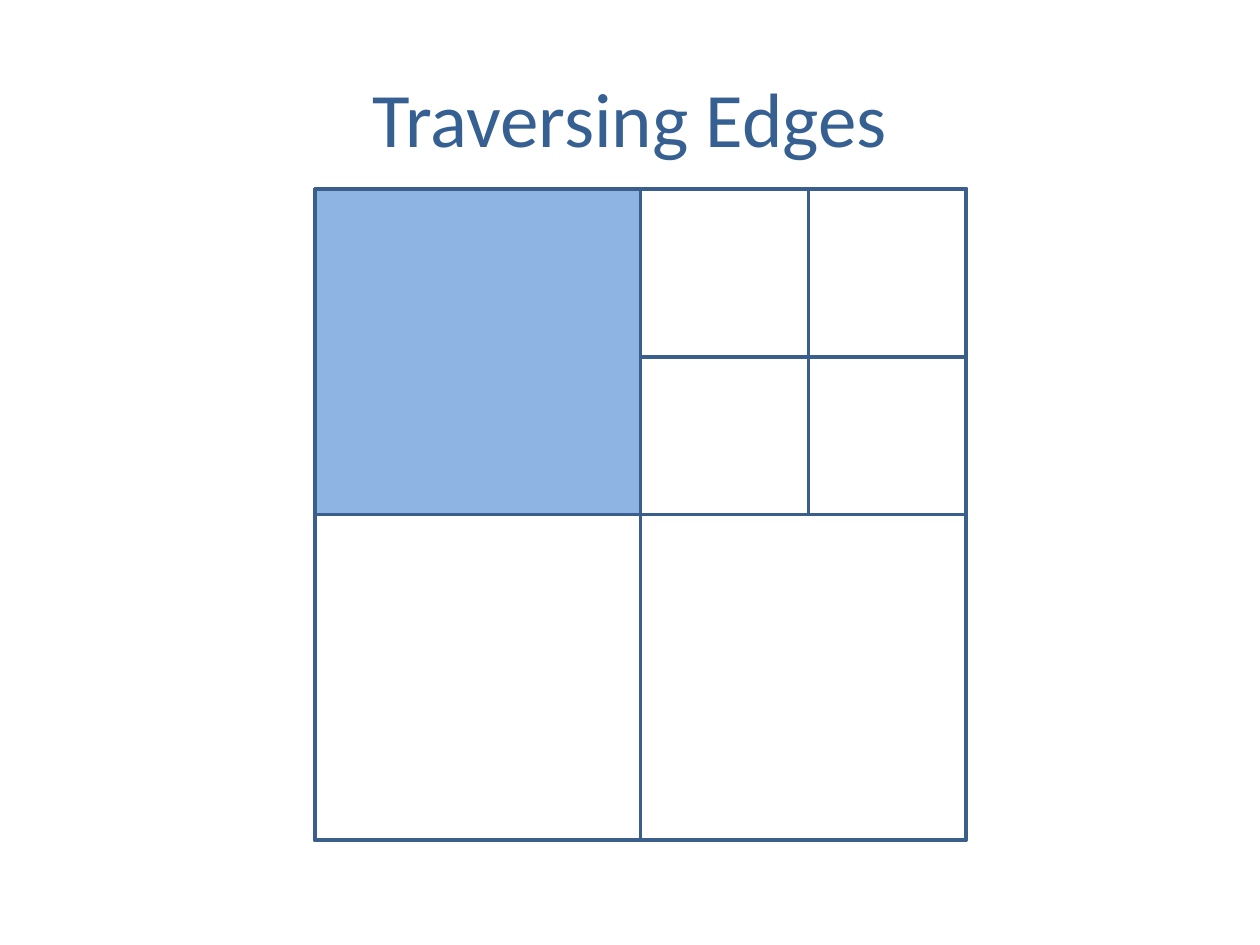
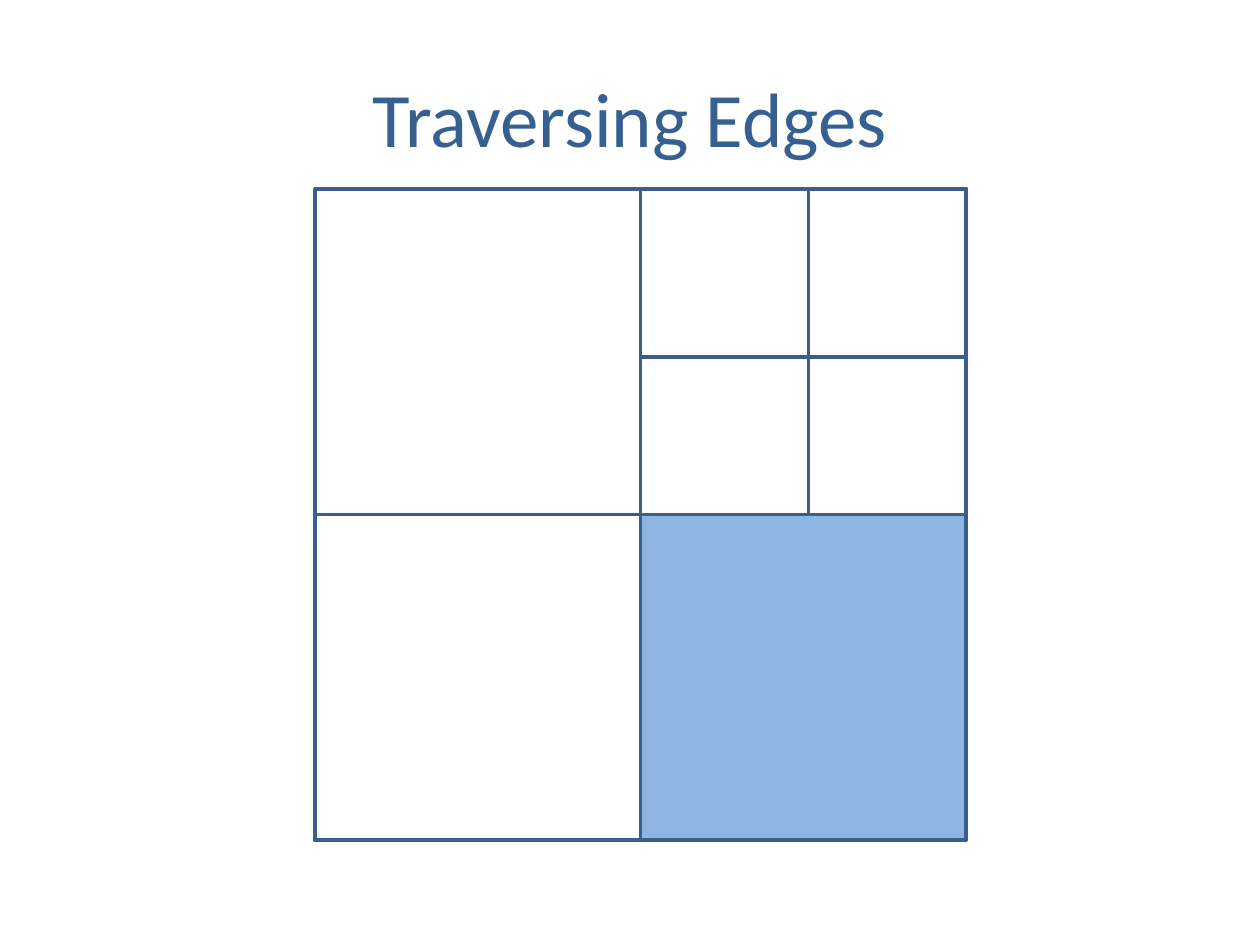
from pptx import Presentation
from pptx.dml.color import RGBColor
from pptx.enum.shapes import MSO_SHAPE
from pptx.enum.text import MSO_ANCHOR, PP_ALIGN
from pptx.util import Emu, Pt

RECT = MSO_SHAPE.RECTANGLE
MIDDLE = MSO_ANCHOR.MIDDLE
CENTER = PP_ALIGN.CENTER

# 120 px to the inch
SCALE = 7620
INK, EDGE, MARK = "376092", "3A5F8C", "8EB4E3"

# Quadtree: root square, four quadrants, one quadrant split again
LEFT, TOP, HALF = 300, 180, 310
SPLIT = (160, 150)


def px(*sizes):
    return [Emu(size * SCALE) for size in sizes]


def color(code):
    return RGBColor.from_string(code)


def put(target, values):
    for name, value in values.items():
        setattr(target, name, value)


class Deck:
    font = {"name": "Calibri", "size": Pt(44), "bold": False}
    frame = {"vertical_anchor": MIDDLE, "word_wrap": True}
    line = {"width": Pt(2)}

    def __init__(self):
        self.file = Presentation()
        width, height = px(1200, 900)
        put(self.file, {"slide_width": width, "slide_height": height})
        self.slide = None

    def page(self, text):
        """Start a slide and set its title."""
        self.slide = self.file.slides.add_slide(self.file.slide_layouts[5])
        title = self.slide.shapes.title
        spots = ("left", "top", "width", "height")
        put(title, dict(zip(spots, px(60, 36, 1080, 150))))
        put(title.text_frame, self.frame)
        title.text_frame.text = text
        para = title.text_frame.paragraphs[0]
        para.alignment = CENTER
        put(para.font, self.font)
        para.font.color.rgb = color(INK)

    def cell(self, left, top, width, height, fill=None):
        """Draw an outlined box, filled only if marked."""
        box = self.slide.shapes.add_shape(RECT, *px(left, top, width, height))
        box.shadow.inherit = False
        if fill:
            box.fill.solid()
            box.fill.fore_color.rgb = color(fill)
        else:
            box.fill.background()
        put(box.line, self.line)
        box.line.color.rgb = color(EDGE)

    def tree(self, marked):
        """Draw the quadtree with one (column, row) quadrant marked."""
        self.cell(LEFT, TOP, 2 * HALF, 2 * HALF)
        # Quadrants
        for row in range(2):
            for col in range(2):
                fill = MARK if (col, row) == marked else None
                self.cell(LEFT + col * HALF, TOP + row * HALF, HALF, HALF, fill)
        # Children of the top right quadrant
        for col, width in enumerate(SPLIT):
            for row, height in enumerate(SPLIT):
                self.cell(LEFT + HALF + col * SPLIT[0], TOP + row * SPLIT[0],
                          width, height)


def main():
    deck = Deck()
    for marked in ((0, 0), (1, 1)):
        deck.page("Traversing Edges")
        deck.tree(marked)
    deck.file.save("out.pptx")


if __name__ == "__main__":
    main()
